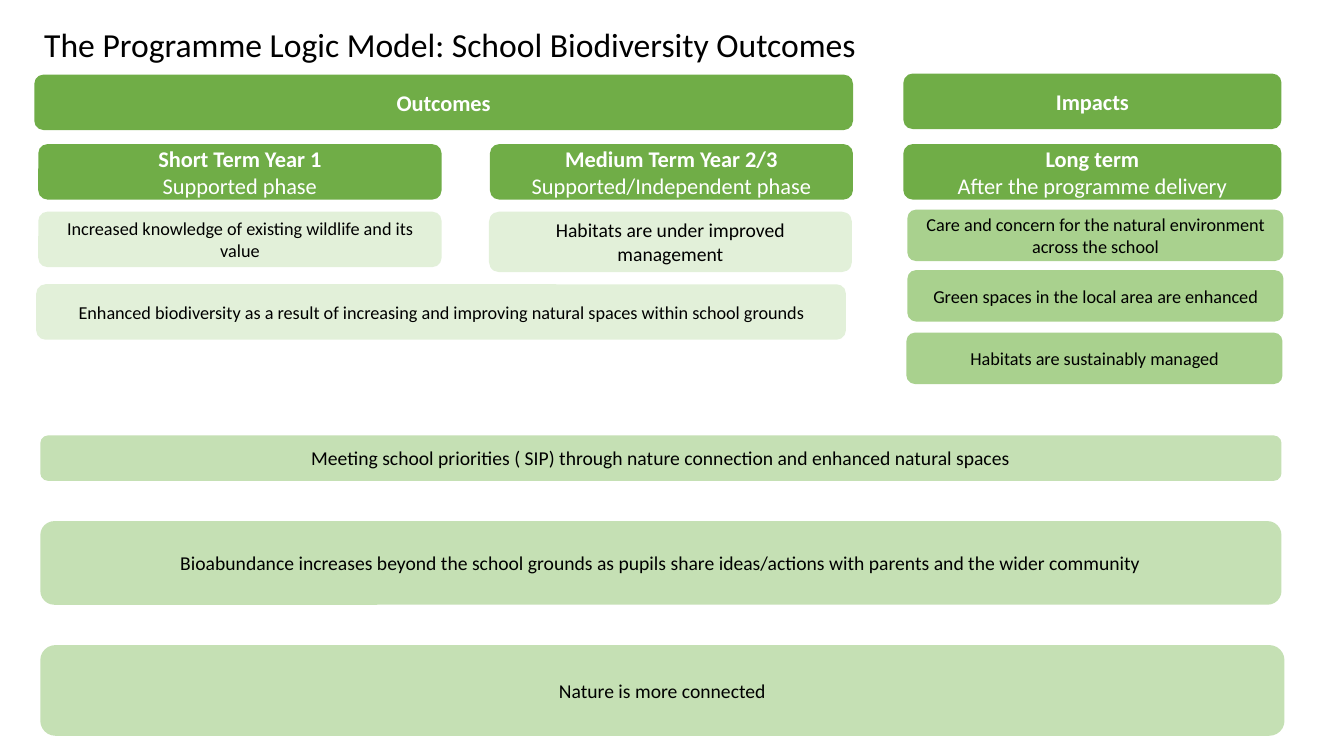
from dataclasses import dataclass

from pptx import Presentation
from pptx.dml.color import RGBColor
from pptx.enum.shapes import MSO_SHAPE
from pptx.enum.text import MSO_ANCHOR, PP_ALIGN
from pptx.slide import Slide
from pptx.text.text import TextFrame
from pptx.util import Emu, Pt

EMU_PER_PX = 9144
FONT = "Calibri"
COLOURS = {
    "heading": "70AD47",
    "outcome": "E2F0D9",
    "impact": "A9D18E",
    "shared": "C5E0B4",
    "light_text": "FFFFFF",
    "dark_text": "000000",
}


@dataclass(frozen=True)
class Box:
    text: str
    left: int
    top: int
    width: int
    height: int
    size: int = 13


HEADINGS = [
    Box("Outcomes", 34, 74, 812, 55, 16),
    Box("Impacts", 896, 73, 375, 55, 16),
    Box("Short Term Year 1\nSupported phase", 38, 143, 400, 55, 16),
    Box("Medium Term Year 2/3\nSupported/Independent phase", 486, 143, 360, 55, 16),
    Box("Long term\nAfter the programme delivery", 896, 143, 375, 55, 16),
]
OUTCOMES = [
    Box("Increased knowledge of existing wildlife and its value", 38, 210, 400, 55),
    Box("Habitats are under improved management", 485, 210, 360, 60, 14),
    Box("Enhanced biodiversity as a result of increasing and improving "
        "natural spaces within school grounds", 36, 282, 803, 55),
]
IMPACTS = [
    Box("Care and concern for the natural environment across the school",
        900, 208, 373, 51),
    Box("Green spaces in the local area are enhanced", 900, 268, 373, 51),
    Box("Habitats are sustainably managed", 899, 330, 373, 51),
]
SHARED = [
    Box("Meeting school priorities ( SIP) through nature connection "
        "and enhanced natural spaces", 40, 432, 1231, 45, 14),
    Box("Bioabundance increases beyond the school grounds as pupils share "
        "ideas/actions with parents and the wider community", 40, 517, 1231, 83, 14),
    Box("Nature is more connected", 40, 640, 1234, 90, 14),
]
TITLE = Box("The Programme Logic Model: School Biodiversity Outcomes",
            34, 3, 1150, 66, 24)


def px(length: int) -> Emu:
    return Emu(length * EMU_PER_PX)


def bounds(box: Box) -> tuple[Emu, Emu, Emu, Emu]:
    return px(box.left), px(box.top), px(box.width), px(box.height)


def write(frame: TextFrame, text: str, *, size: int, colour: str = "dark_text",
          bold_first: bool = False, align: PP_ALIGN = PP_ALIGN.CENTER,
          anchor: MSO_ANCHOR = MSO_ANCHOR.MIDDLE, spacing: float = 1.0) -> None:
    frame.word_wrap = True
    frame.vertical_anchor = anchor
    for index, line in enumerate(text.split("\n")):
        paragraph = frame.add_paragraph() if index else frame.paragraphs[0]
        paragraph.alignment = align
        paragraph.line_spacing = spacing
        run = paragraph.add_run()
        run.text = line
        run.font.name = FONT
        run.font.size = Pt(size)
        run.font.bold = bold_first and index == 0
        run.font.color.rgb = RGBColor.from_string(COLOURS[colour])


def draw_box(slide: Slide, box: Box, fill: str) -> None:
    panel = slide.shapes.add_shape(MSO_SHAPE.ROUNDED_RECTANGLE, *bounds(box))
    panel.shadow.inherit = False
    panel.fill.solid()
    panel.fill.fore_color.rgb = RGBColor.from_string(COLOURS[fill])
    panel.line.fill.background()
    heading = fill == "heading"
    write(panel.text_frame, box.text, size=box.size, bold_first=heading,
          colour="light_text" if heading else "dark_text")


def draw_title(slide: Slide) -> None:
    title = slide.shapes.add_textbox(*bounds(TITLE))
    write(title.text_frame, TITLE.text, size=TITLE.size, align=PP_ALIGN.LEFT,
          anchor=MSO_ANCHOR.BOTTOM, spacing=0.9)


def main() -> None:
    deck = Presentation()
    deck.slide_width, deck.slide_height = px(1333), px(750)
    slide = deck.slides.add_slide(deck.slide_layouts[6])
    draw_title(slide)
    groups = {"heading": HEADINGS, "outcome": OUTCOMES,
              "impact": IMPACTS, "shared": SHARED}
    for fill, boxes in groups.items():
        for box in boxes:
            draw_box(slide, box, fill)
    deck.save("out.pptx")


if __name__ == "__main__":
    main()
